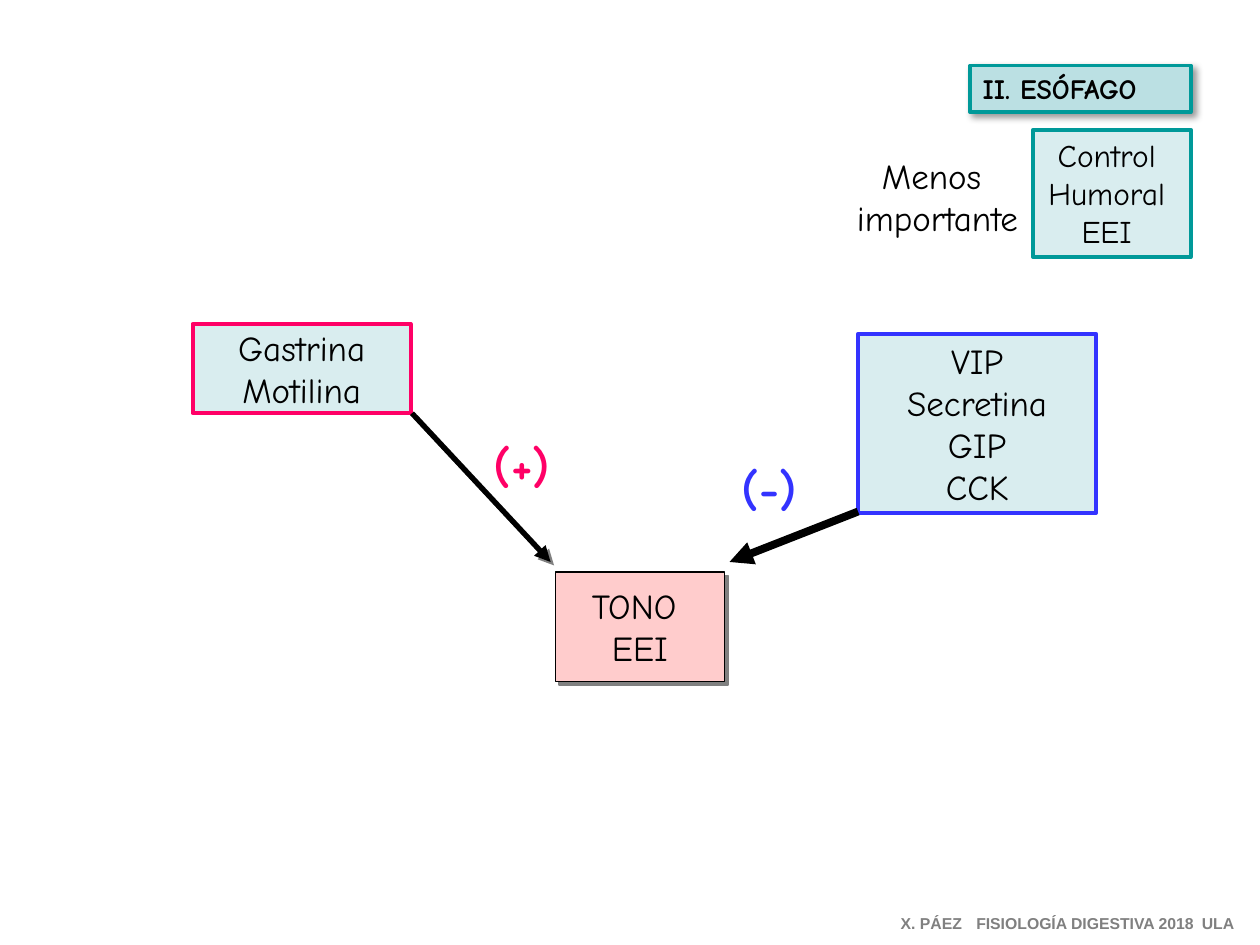
"""Build the slide on humoral control of the lower oesophageal sphincter."""
from lxml import etree
from pptx import Presentation, util as u
from pptx.dml.color import RGBColor
from pptx.enum import shapes, text
from pptx.oxml import ns

prs = Presentation()
prs.slide_width, prs.slide_height = u.Inches(10), u.Inches(7.5)
COL, ROW = prs.slide_width / 100, prs.slide_height / 75
HAND, TEAL, PINK, BLUE = "Comic Neue", "009999", "FF0066", "3333FF"
BLACK, GREY, PALE = "000000", "808080", "D9EDEF"
HARD, SOFT = (GREY, 100, 0, 2.8), (BLACK, 40, 4, 3)
s = prs.slides.add_slide(prs.slide_layouts[6])


def rgb(value):
    return RGBColor.from_string(value)


def add_shadow(effects, value, alpha, blur, dist):
    shadow = etree.SubElement(
        effects, ns.qn("a:outerShdw"), blurRad=str(u.Pt(blur)),
        dist=str(u.Pt(dist)), dir="2700000", algn="ctr", rotWithShape="0")
    color = etree.SubElement(shadow, ns.qn("a:srgbClr"), val=value)
    etree.SubElement(color, ns.qn("a:alpha"), val=str(alpha * 1000))


boxes = [
    (82, 10.3, 12.5, 10.1, PALE, TEAL, 2.25, None, 18, False, True,
     ["Control ", "Humoral ", "EEI "]),
    (15.3, 25.7, 17.3, 7.1, PALE, PINK, 2.25, None, 20, False, False,
     ["Gastrina", "Motilina"]),
    (44.1, 45.4, 13.4, 8.7, "FFCCCC", BLACK, 0.75, HARD, 20, False, False,
     ["TONO ", "EEI"]),
    (68.1, 26.5, 18.9, 14.2, PALE, BLUE, 2.25, None, 20, False, False,
     ["VIP", "Secretina", "GIP", "CCK"]),
    (77, 5.2, 17.5, 3.7, "BBE0E3", TEAL, 2.25, SOFT, 16, True, True,
     ["II. ESÓFAGO"]),
]
for x, y, w, h, fill, line, width, shade, size, bold, grow, rows in boxes:
    sp = s.shapes.add_shape(shapes.MSO_SHAPE.RECTANGLE, int(x * COL),
                            int(y * ROW), int(w * COL), int(h * ROW))
    sp.fill.solid()
    sp.fill.fore_color.rgb = rgb(fill)
    sp.line.color.rgb = rgb(line)
    sp.line.width = u.Pt(width)
    sp.shadow.inherit = False
    if shade:
        add_shadow(sp._element.spPr.find(ns.qn("a:effectLst")), *shade)
    tf = sp.text_frame
    tf.word_wrap = grow and not bold
    tf.vertical_anchor = text.MSO_ANCHOR.TOP if grow else text.MSO_ANCHOR.MIDDLE
    if grow:
        tf.auto_size = text.MSO_AUTO_SIZE.SHAPE_TO_FIT_TEXT
    for i, row in enumerate(rows):
        p = tf.add_paragraph() if i else tf.paragraphs[0]
        p.alignment = text.PP_ALIGN.LEFT if bold else text.PP_ALIGN.CENTER
        r = p.add_run()
        r.text = row
        r.font.name, r.font.size, r.font.bold = HAND, u.Pt(size), bold
        r.font.color.rgb = rgb(BLACK)

arrows = [(32.7, 32.8, 43.7, 44.6, 3, HARD), (68.1, 40.6, 57.9, 44.6, 4.5, None)]
for x1, y1, x2, y2, width, shade in arrows:
    c = s.shapes.add_connector(shapes.MSO_CONNECTOR.STRAIGHT, int(x1 * COL),
                               int(y1 * ROW), int(x2 * COL), int(y2 * ROW))
    c.line.color.rgb = rgb(BLACK)
    c.line.width = u.Pt(width)
    props = c._element.spPr
    etree.SubElement(props.find(ns.qn("a:ln")), ns.qn("a:tailEnd"), type="triangle")
    effects = etree.SubElement(props, ns.qn("a:effectLst"))
    if shade:
        add_shadow(effects, *shade)

labels = [
    (57.9, 35.8, 7.2, 5.7, 28, HAND, BLUE, True, ["(-)"]),
    (38.2, 34, 7.2, 5.7, 28, HAND, PINK, True, ["(+)"]),
    (66.2, 11.8, 16.4, 7.7, 20, HAND, BLACK, False, ["Menos ", "importante"]),
    (70.5, 72, 28.6, 2.5, 9, "Arial", GREY, True,
     ["X. PÁEZ\tFISIOLOGÍA DIGESTIVA 2018\tULA"]),
]
for x, y, w, h, size, face, color, bold, rows in labels:
    sp = s.shapes.add_textbox(int(x * COL), int(y * ROW), int(w * COL), int(h * ROW))
    tf = sp.text_frame
    tf.word_wrap = False
    tf.auto_size = text.MSO_AUTO_SIZE.SHAPE_TO_FIT_TEXT
    for i, row in enumerate(rows):
        p = tf.add_paragraph() if i else tf.paragraphs[0]
        p.alignment = text.PP_ALIGN.LEFT if bold else text.PP_ALIGN.CENTER
        if "\t" in row:
            tabs = etree.SubElement(p._p.get_or_add_pPr(), ns.qn("a:tabLst"))
            for stop in (6, 23.9):
                etree.SubElement(tabs, ns.qn("a:tab"), pos=str(int(stop * COL)), algn="l")
        r = p.add_run()
        r.text = row
        r.font.name, r.font.size, r.font.bold = face, u.Pt(size), bold
        r.font.color.rgb = rgb(color)
        if size == 28:
            effects = etree.Element(ns.qn("a:effectLst"))
            r._r.rPr.find(ns.qn("a:solidFill")).addnext(effects)
            add_shadow(effects, BLACK, 100, 0, 2.8)

prs.save("out.pptx")
